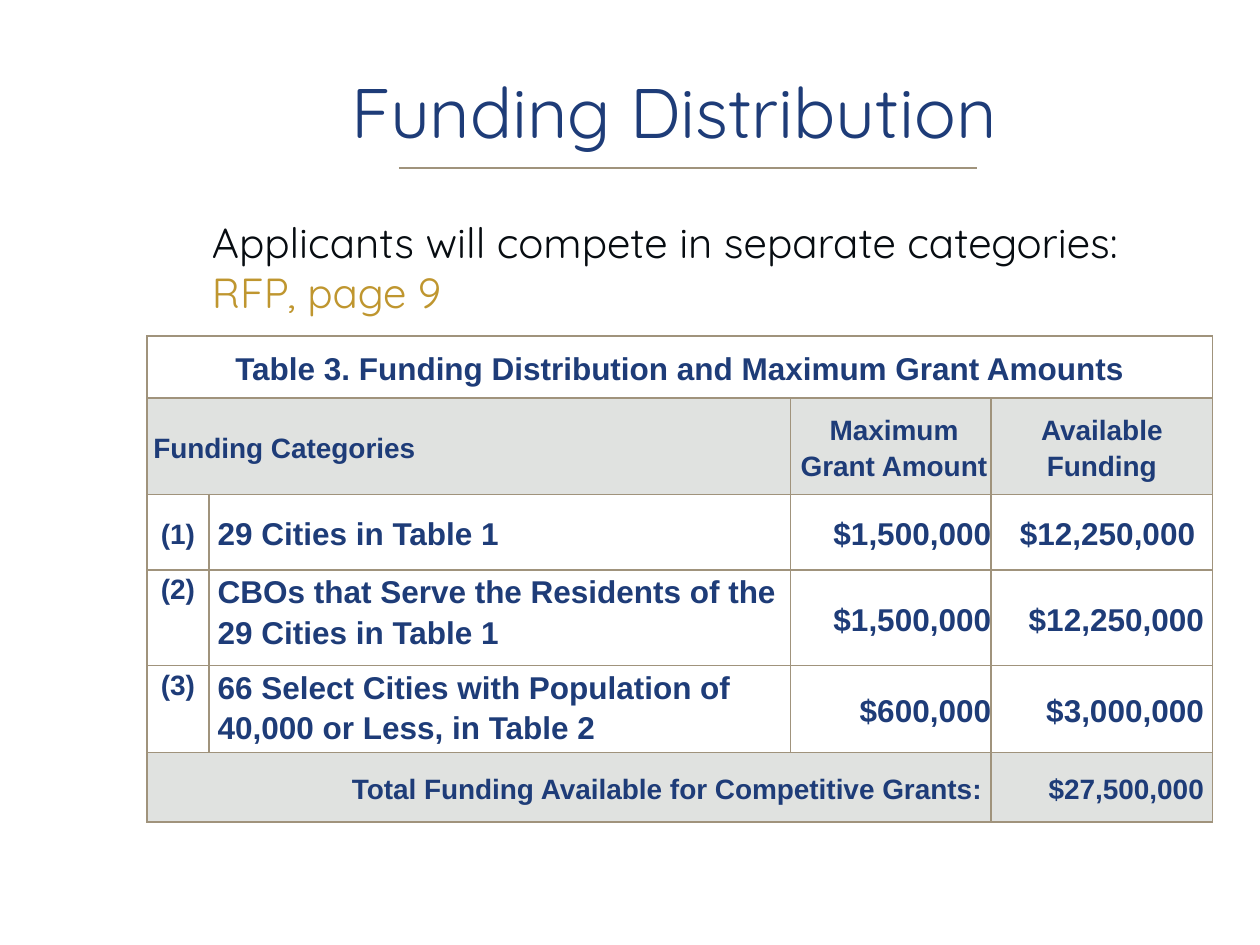
from dataclasses import dataclass
from lxml import etree
from pptx import Presentation, util as u
from pptx.dml.color import RGBColor
from pptx.enum import shapes, text
from pptx.oxml.ns import qn

AL, MID, TOP = text.PP_ALIGN, text.MSO_ANCHOR.MIDDLE, text.MSO_ANCHOR.TOP


@dataclass(frozen=True)
class Theme:
    navy: str = "1E3C78"
    ink: str = "070C11"
    gold: str = "BF962F"
    rule: str = "A0937C"
    gray: str = "E0E2E0"
    white: str = "FFFFFF"
    face: str = "Quicksand"
    grid: str = "Arial"
    head: int = 40
    lead: int = 24
    big: int = 18
    mid: int = 16


@dataclass
class Cell:
    text: str
    size: int
    align: AL = AL.CENTER
    left: float = 0
    right: float = 0
    anchor: text.MSO_ANCHOR = MID
    span: int = 1


class Page:
    """Places elements on a slide cut into 120 columns and 90 rows."""

    def __init__(self, deck, theme):
        self.t = theme
        self.w, self.h = deck.slide_width / 120, deck.slide_height / 90
        self.slide = deck.slides.add_slide(deck.slide_layouts[6])

    def box(self, x, y, w, h):
        return [u.Emu(round(n * s)) for n, s in
                zip((x, y, w, h), (self.w, self.h) * 2)]

    def font(self, font, face, size, color, bold=False):
        font.name, font.size, font.bold = face, u.Pt(size), bold
        font.color.rgb = RGBColor.from_string(color)

    def words(self, area, runs, size, anchor=TOP, left=0.1, pad=0.05):
        """Writes one paragraph of (text, colour) runs."""
        frame = self.slide.shapes.add_textbox(*self.box(*area)).text_frame
        frame.word_wrap, frame.vertical_anchor = True, anchor
        frame.margin_left = u.Inches(left)
        frame.margin_top = frame.margin_bottom = u.Inches(pad)
        para = frame.paragraphs[0]
        for words, color in runs:
            run = para.add_run()
            run.text = words
            self.font(run.font, self.t.face, size, color)

    def line(self, x, y, end):
        a, b, c, d = self.box(x, y, end, y)
        line = self.slide.shapes.add_connector(
            shapes.MSO_CONNECTOR.STRAIGHT, a, b, c, d)
        line.line.color.rgb = RGBColor.from_string(self.t.rule)
        line.line.width = u.Pt(0.75)
        etree.SubElement(line._element.spPr, qn("a:effectLst"))

    def edges(self, cell):
        props = cell._tc.get_or_add_tcPr()
        for side in "LRTB":
            edge = etree.SubElement(props, qn(f"a:ln{side}"), w=str(u.Pt(1)))
            fill = etree.SubElement(edge, qn("a:solidFill"))
            etree.SubElement(fill, qn("a:srgbClr"), val=self.t.rule)

    def fill(self, cell, item, color):
        cell.vertical_anchor = item.anchor
        cell.margin_left = u.Inches(item.left)
        cell.margin_right = u.Inches(item.right)
        para = cell.text_frame.paragraphs[0]
        para.text, para.alignment = item.text, item.align
        para.line_spacing = 1.15
        self.font(para.font, self.t.grid, item.size, self.t.navy, True)

    def table(self, x, y, cols, rows, data, shades):
        area = self.box(x, y, sum(cols), sum(rows))
        table = self.slide.shapes.add_table(len(rows), len(cols), *area).table
        table.first_row = table.horz_banding = False
        for col, width in zip(table.columns, cols):
            col.width = u.Emu(round(width * self.w))
        for row, height in zip(table.rows, rows):
            row.height = u.Emu(round(height * self.h))
        for r, (items, shade) in enumerate(zip(data, shades)):
            for c in range(len(cols)):
                cell = table.cell(r, c)
                cell.margin_top = cell.margin_bottom = 0
                self.edges(cell)
                cell.fill.solid()
                cell.fill.fore_color.rgb = RGBColor.from_string(shade)
            c = 0
            for item in items:
                cell = table.cell(r, c)
                c += item.span
                if item.span > 1:
                    cell.merge(table.cell(r, c - 1))
                self.fill(cell, item, shade)


def main():
    t, pad = Theme(), 0.07
    deck = Presentation()
    deck.slide_width, deck.slide_height = u.Inches(10), u.Inches(7.5)
    page = Page(deck, t)
    page.words((19, 20, 96.5, 54),
               [("Applicants will compete in separate categories: ", t.ink),
                ("RFP, page 9", t.gold)], t.lead)
    page.words((27, 7, 82, 7), [("Funding Distribution", t.navy)],
               t.head, MID, left=0.54, pad=0)
    page.line(38, 16, 93)

    def group(mark, name, most, funds, anchor=TOP):
        return [Cell(mark, t.mid, anchor=anchor),
                Cell(name, t.big, AL.LEFT, pad, pad, anchor),
                Cell(most, t.big, AL.RIGHT),
                Cell(funds, t.big, AL.RIGHT, pad, pad)]

    data = [
        [Cell("Table 3. Funding Distribution and Maximum Grant Amounts",
              t.big, span=4)],
        [Cell("Funding Categories", t.mid, AL.JUSTIFY, 0.05, span=2),
         Cell("Maximum Grant Amount", t.mid, left=0.05),
         Cell("Available Funding", t.mid, left=pad, right=pad)],
        group("(1)", "29 Cities in Table 1", "$1,500,000", "$12,250,000 ", MID),
        group("(2)", "CBOs that Serve the Residents of the 29 Cities in Table 1",
              "$1,500,000", "$12,250,000"),
        group("(3)", "66 Select Cities with Population of 40,000 or Less, "
              "in Table 2", "$600,000", "$3,000,000"),
        [Cell("Total Funding Available for Competitive Grants:", t.mid,
              AL.RIGHT, right=pad, span=3),
         Cell("$27,500,000", t.mid, AL.RIGHT, pad, pad)],
    ]
    page.table(14, 32, (5.9, 55.4, 19.1, 21.1), (5.9, 9.2, 7.2, 9.1, 8.3, 6.6),
               data, (t.white, t.gray, t.white, t.white, t.white, t.gray))
    deck.save("out.pptx")


if __name__ == "__main__":
    main()
